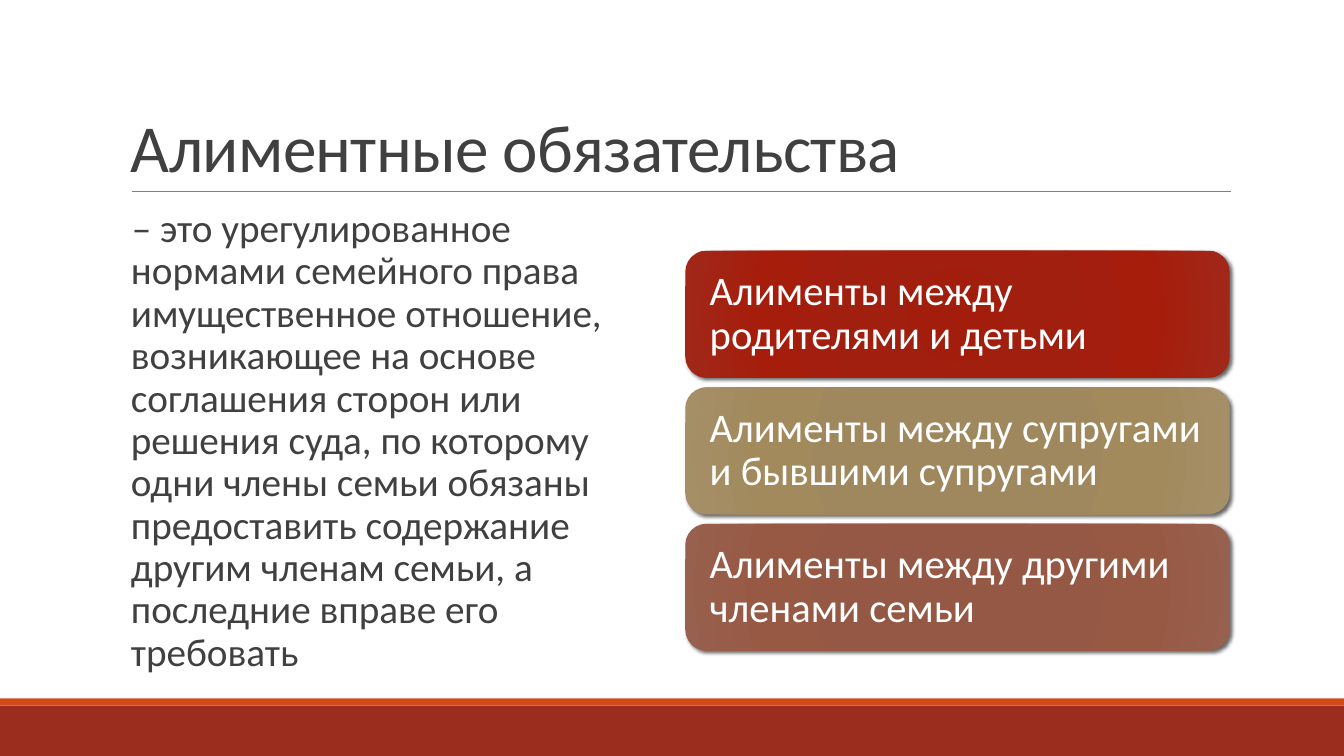
import pptx
import pptx.util
import pptx.dml.color
import pptx.enum.shapes
import pptx.enum.text
import pptx.oxml
import pptx.oxml.ns

Cm = pptx.util.Cm
Pt = pptx.util.Pt

HEADING = "Алиментные обязательства"
DEFINITION = (
    "– это урегулированное нормами семейного права имущественное отношение, "
    "возникающее на основе соглашения сторон или решения суда, по которому "
    "одни члены семьи обязаны предоставить содержание другим членам семьи, "
    "а последние вправе его требовать"
)
KINDS = [
    ("Алименты между родителями и детьми", "red"),
    ("Алименты между супругами и бывшими супругами", "sand"),
    ("Алименты между другими членами семьи", "brown"),
]
COLORS = {
    "text": "404040", "white": "FFFFFF", "rule": "808080",
    "footer": "9B2D1F", "accent": "D34817", "shadow": "000000",
    "red_0": "A21D0C", "red_34": "A01F0F", "red_70": "A61D0C", "red_100": "A12819",
    "sand_0": "9F875B", "sand_34": "9F885D", "sand_70": "A38A5D", "sand_100": "A58F67",
    "brown_0": "945742", "brown_34": "945844", "brown_70": "985944", "brown_100": "98604E",
}
STOPS = (0, 34, 70, 100)
FONT = "Calibri"
SLIDE_WIDTH, SLIDE_HEIGHT = Cm(33.87), Cm(19.05)
CARD_LEFT, CARD_TOP, CARD_WIDTH, CARD_HEIGHT = Cm(17.27), Cm(6.32), Cm(13.72), Cm(3.2)
CARD_PITCH = Cm(3.44)


def color(name):
    return pptx.dml.color.RGBColor.from_string(COLORS[name])


def parse_xml(tag, attributes="", content=""):
    return pptx.oxml.parse_xml(
        f'<a:{tag} {pptx.oxml.ns.nsdecls("a")} {attributes}>{content}</a:{tag}>'
    )


def place(part, left, top, width, height):
    part.left, part.top, part.width, part.height = left, top, width, height


def write(part, text, size, ink, line_spacing, anchor, insets):
    frame = part.text_frame
    frame.text = text
    frame.word_wrap = True
    frame.auto_size = pptx.enum.text.MSO_AUTO_SIZE.NONE
    frame.vertical_anchor = anchor
    frame.margin_left = frame.margin_right = insets[0]
    frame.margin_top = frame.margin_bottom = insets[1]
    paragraph = frame.paragraphs[0]
    paragraph.alignment = pptx.enum.text.PP_ALIGN.LEFT
    paragraph.line_spacing = line_spacing
    paragraph.space_before = paragraph.space_after = Pt(0)
    font = paragraph.runs[0].font
    font.name, font.size, font.color.rgb = FONT, Pt(size), color(ink)
    return paragraph


def add_band(slide, top, height, ink):
    band = slide.shapes.add_shape(
        pptx.enum.shapes.MSO_SHAPE.RECTANGLE, 0, top, SLIDE_WIDTH, height)
    band.shadow.inherit = False
    band.fill.solid()
    band.fill.fore_color.rgb = color(ink)
    band.line.fill.background()


def add_card(slide, top, text, palette):
    card = slide.shapes.add_shape(
        pptx.enum.shapes.MSO_SHAPE.ROUNDED_RECTANGLE,
        CARD_LEFT, top, CARD_WIDTH, CARD_HEIGHT)
    card.line.fill.background()
    card.shadow.inherit = False
    properties = card.element.spPr
    stops = "".join(
        f'<a:gs pos="{stop * 1000}"><a:srgbClr val="{COLORS[f"{palette}_{stop}"]}"/></a:gs>'
        for stop in STOPS)
    properties.find(pptx.oxml.ns.qn("a:prstGeom")).addnext(parse_xml(
        "gradFill", 'rotWithShape="1"',
        f'<a:gsLst>{stops}</a:gsLst><a:path path="circle">'
        '<a:fillToRect l="100000" t="100000" r="100000" b="100000"/></a:path>'))
    properties.find(pptx.oxml.ns.qn("a:effectLst")).append(parse_xml(
        "outerShdw",
        f'blurRad="{Pt(3)}" dist="{Pt(2)}" dir="2700000" algn="ctr" rotWithShape="0"',
        f'<a:srgbClr val="{COLORS["shadow"]}"><a:alpha val="60000"/></a:srgbClr>'))
    write(card, text, 29, "white", 0.9,
          pptx.enum.text.MSO_ANCHOR.MIDDLE, (Cm(0.46), Cm(0.46)))


def main():
    deck = pptx.Presentation()
    deck.slide_width, deck.slide_height = SLIDE_WIDTH, SLIDE_HEIGHT
    slide = deck.slides.add_slide(deck.slide_layouts[1])

    add_band(slide, Cm(17.78), Cm(1.27), "footer")
    add_band(slide, Cm(17.6), Cm(0.18), "accent")

    rule = slide.shapes.add_connector(
        pptx.enum.shapes.MSO_CONNECTOR.STRAIGHT, Cm(3.33), Cm(4.83), Cm(31.01), Cm(4.83))
    rule.line.color.rgb = color("rule")
    rule.line.width = Pt(0.5)
    rule.element.spPr.append(parse_xml("effectLst"))

    heading = slide.shapes.title
    place(heading, Cm(3.05), Cm(0.79), Cm(27.94), Cm(4.04))
    heading_line = write(heading, HEADING, 48, "text", 0.85,
                         pptx.enum.text.MSO_ANCHOR.BOTTOM, (Cm(0.25), Cm(0.13)))
    heading_line.runs[0].font._element.set("spc", "-50")

    definition = slide.placeholders[1]
    place(definition, Cm(3.05), Cm(5.13), Cm(13.67), Cm(12.47))
    definition_line = write(definition, DEFINITION, 28, "text", 0.9,
                            pptx.enum.text.MSO_ANCHOR.TOP, (0, Cm(0.13)))
    definition_line.space_before, definition_line.space_after = Pt(12), Pt(2)
    layout = definition_line._p.get_or_add_pPr()
    layout.set("marL", str(Cm(0.25)))
    layout.set("indent", str(-Cm(0.25)))
    layout.append(parse_xml("buClr", content=f'<a:srgbClr val="{COLORS["accent"]}"/>'))
    layout.append(parse_xml("buChar", 'char=" "'))

    for row, (text, palette) in enumerate(KINDS):
        add_card(slide, CARD_TOP + row * CARD_PITCH, text, palette)

    deck.save("out.pptx")


if __name__ == "__main__":
    main()
